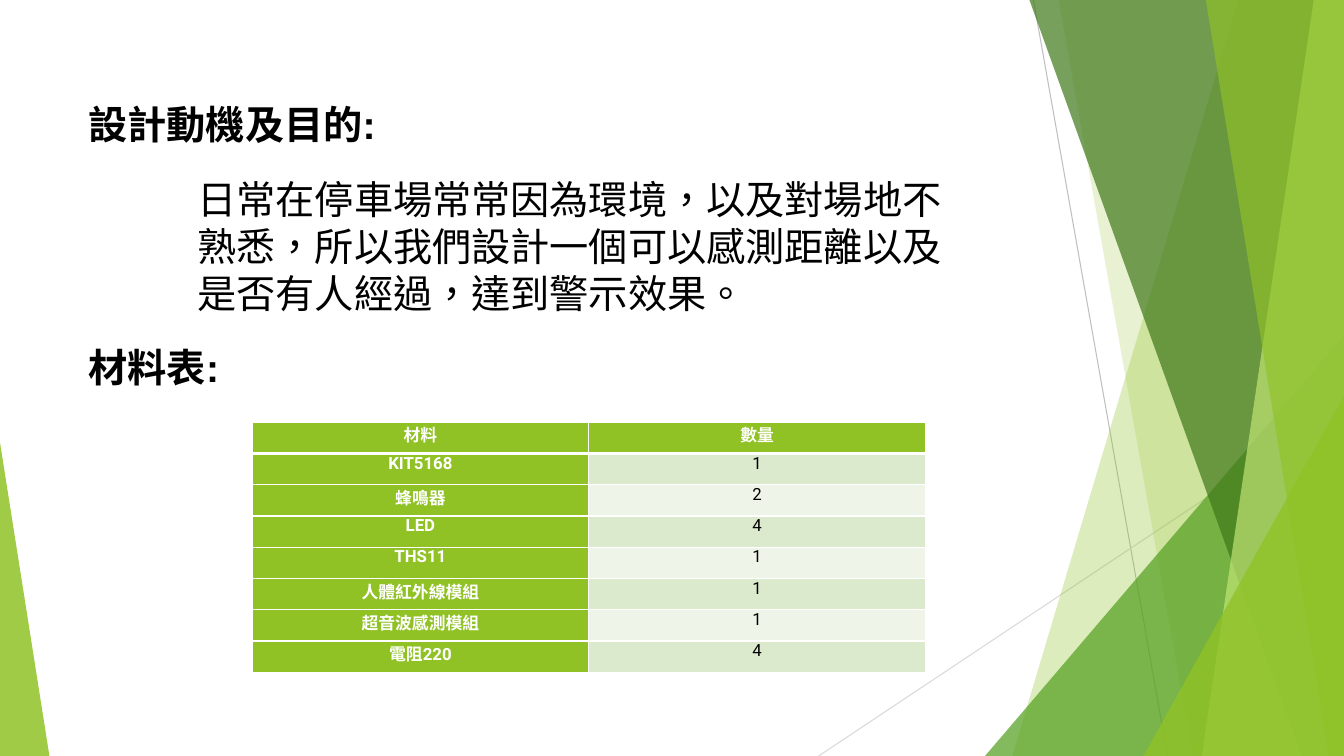
from dataclasses import dataclass

from lxml.etree import SubElement
from pptx import Presentation
from pptx.dml.color import RGBColor
from pptx.enum.lang import MSO_LANGUAGE_ID as Language
from pptx.enum.shapes import MSO_CONNECTOR as Connector, MSO_SHAPE as Shape
from pptx.enum.text import MSO_AUTO_SIZE as AutoSize, PP_ALIGN as Align
from pptx.oxml.ns import qn
from pptx.util import Inches, Pt


@dataclass(frozen=True)
class Theme:
    lime: str = "90C226"
    green: str = "54A021"
    dark_green: str = "3F7819"
    pale_lime: str = "C0E474"
    white: str = "FFFFFF"
    black: str = "000000"
    odd_row: str = "DBE9CD"
    even_row: str = "EEF4E8"
    body_font: str = "Arial"
    table_font: str = "Roboto"
    body_size: int = 28
    table_size: int = 12


THEME = Theme()
WIDTH, HEIGHT = 13.33, 7.5

# text, (left, top, width, height), bold, wrap
TEXTS = [
    ("設計動機及目的:", (0.78, 0.95, 3.06, 0.57), True, False),
    ("日常在停車場常常因為環境，以及對場地不熟悉，所以我們設計一個可以感測距離以及是否有人經過，達到警示效果。",
     (1.86, 1.69, 7.91, 1.51), False, True),
    ("材料表:", (0.78, 3.36, 1.49, 0.57), True, False),
]

MATERIALS = [
    ("材料", "數量"),
    ("KIT5168", "1"),
    ("蜂鳴器", "2"),
    ("LED", "4"),
    ("THS11", "1"),
    ("人體紅外線模組", "1"),
    ("超音波感測模組", "1"),
    ("電阻220", "4"),
]
TABLE_LEFT, TABLE_TOP = 2.5, 4.19
COLUMN_WIDTH, ROW_HEIGHT = 3.34, 0.31

# start, end, colour
THIN_LINES = [
    ((10.25, 0), (11.58, HEIGHT), "BFBFBF"),
    ((WIDTH, 4.03), (8.12, HEIGHT), "D9D9D9"),
]

# Bands reach the right edge: ("band", x at top, x at bottom, colour, opacity %)
# Triangles stand on the bottom edge: ("triangle", left, top, width, apex, colour, opacity %)
FACETS = [
    ("band", 12.28, 10.04, THEME.lime, 30),
    ("band", 10.5, 11.83, THEME.lime, 20),
    ("triangle", 9.77, 3.33, 3.56, 1, THEME.green, 72),
    ("band", 10.21, 12.91, THEME.dark_green, 70),
    ("band", 13.03, 11.92, THEME.pale_lime, 70),
    ("band", 11.96, 13.18, THEME.lime, 65),
    ("triangle", 11.34, 3.93, 1.99, 1, THEME.lime, 80),
    ("triangle", 0, 4.39, 0.49, 0, THEME.lime, 85),
]


def color(code):
    return RGBColor.from_string(code)


def add_thin_line(slide, start, end, code):
    line = slide.shapes.add_connector(Connector.STRAIGHT, *map(Inches, start + end))
    line.line.color.rgb = color(code)
    line.line.width = Pt(0.75)
    SubElement(line._element.spPr, qn("a:effectLst"))


def add_band(slide, top_x, bottom_x):
    corners = [(WIDTH, 0), (WIDTH, HEIGHT), (bottom_x, HEIGHT)]
    builder = slide.shapes.build_freeform(Inches(top_x), 0)
    builder.add_line_segments([(Inches(x), Inches(y)) for x, y in corners], close=True)
    return builder.convert_to_shape()


def add_triangle(slide, left, top, width, apex):
    box = map(Inches, (left, top, width, HEIGHT - top))
    shape = slide.shapes.add_shape(Shape.ISOSCELES_TRIANGLE, *box)
    shape.adjustments[0] = apex
    return shape


def add_facet(slide, kind, *values):
    *geometry, code, opacity = values
    draw = add_band if kind == "band" else add_triangle
    shape = draw(slide, *geometry)
    shape.shadow.inherit = False
    shape.line.fill.background()
    shape.fill.solid()
    shape.fill.fore_color.rgb = color(code)
    fill_color = shape._element.spPr.find(qn("a:solidFill"))[0]
    SubElement(fill_color, qn("a:alpha"), val=str(opacity * 1000))


def add_run(paragraph, text, font_name, size, code, bold):
    run = paragraph.add_run()
    run.text = text
    font = run.font
    font.name, font.size, font.bold = font_name, Pt(size), bold
    font.color.rgb = color(code)
    font.language_id = Language.TRADITIONAL_CHINESE


def add_text(slide, text, box, bold, wrap):
    frame = slide.shapes.add_textbox(*map(Inches, box)).text_frame
    frame.word_wrap = wrap
    frame.auto_size = AutoSize.SHAPE_TO_FIT_TEXT
    add_run(frame.paragraphs[0], text, THEME.body_font, THEME.body_size, THEME.black, bold)


def set_borders(cell, bottom_width):
    """Insert white borders ahead of the fill, as the schema orders them."""
    properties = cell._tc.get_or_add_tcPr()
    widths = {"a:lnL": 1, "a:lnR": 1, "a:lnT": 1, "a:lnB": bottom_width}
    for position, (tag, width) in enumerate(widths.items()):
        border = SubElement(properties, qn(tag), w=str(Pt(width)))
        fill = SubElement(border, qn("a:solidFill"))
        SubElement(fill, qn("a:srgbClr"), val=THEME.white)
        properties.insert(position, border)


def cell_fill(row, column):
    if row == 0 or column == 0:
        return THEME.lime
    return THEME.odd_row if row % 2 else THEME.even_row


def add_materials_table(slide):
    rows, columns = len(MATERIALS), len(MATERIALS[0])
    box = (TABLE_LEFT, TABLE_TOP, columns * COLUMN_WIDTH, rows * ROW_HEIGHT)
    table = slide.shapes.add_table(rows, columns, *map(Inches, box)).table
    for column in table.columns:
        column.width = Inches(COLUMN_WIDTH)
    for r, values in enumerate(MATERIALS):
        table.rows[r].height = Inches(ROW_HEIGHT)
        for c, text in enumerate(values):
            cell = table.cell(r, c)
            cell.margin_left = cell.margin_right = Inches(0.07)
            cell.margin_top = cell.margin_bottom = 0
            cell.fill.solid()
            cell.fill.fore_color.rgb = color(cell_fill(r, c))
            set_borders(cell, 3 if r == 0 else 1)
            heading = r == 0 or c == 0
            paragraph = cell.text_frame.paragraphs[0]
            paragraph.alignment = Align.CENTER
            add_run(paragraph, text, THEME.table_font, THEME.table_size,
                    THEME.white if heading else THEME.black, heading)


def main():
    presentation = Presentation()
    presentation.slide_width = Inches(WIDTH)
    presentation.slide_height = Inches(HEIGHT)
    slide = presentation.slides.add_slide(presentation.slide_layouts[6])
    for line in THIN_LINES:
        add_thin_line(slide, *line)
    for facet in FACETS:
        add_facet(slide, *facet)
    for text in TEXTS:
        add_text(slide, *text)
    add_materials_table(slide)
    presentation.save("out.pptx")


if __name__ == "__main__":
    main()
